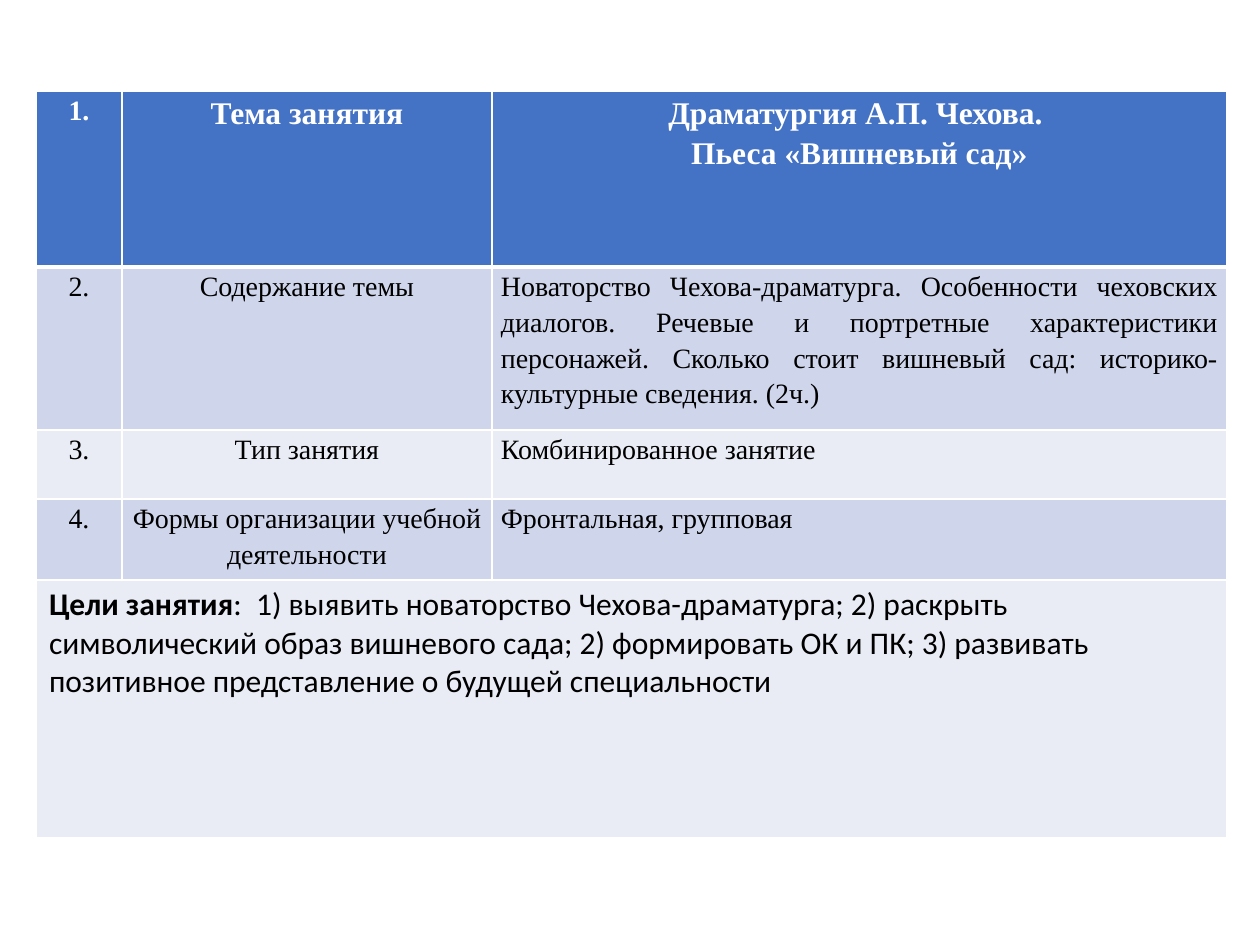
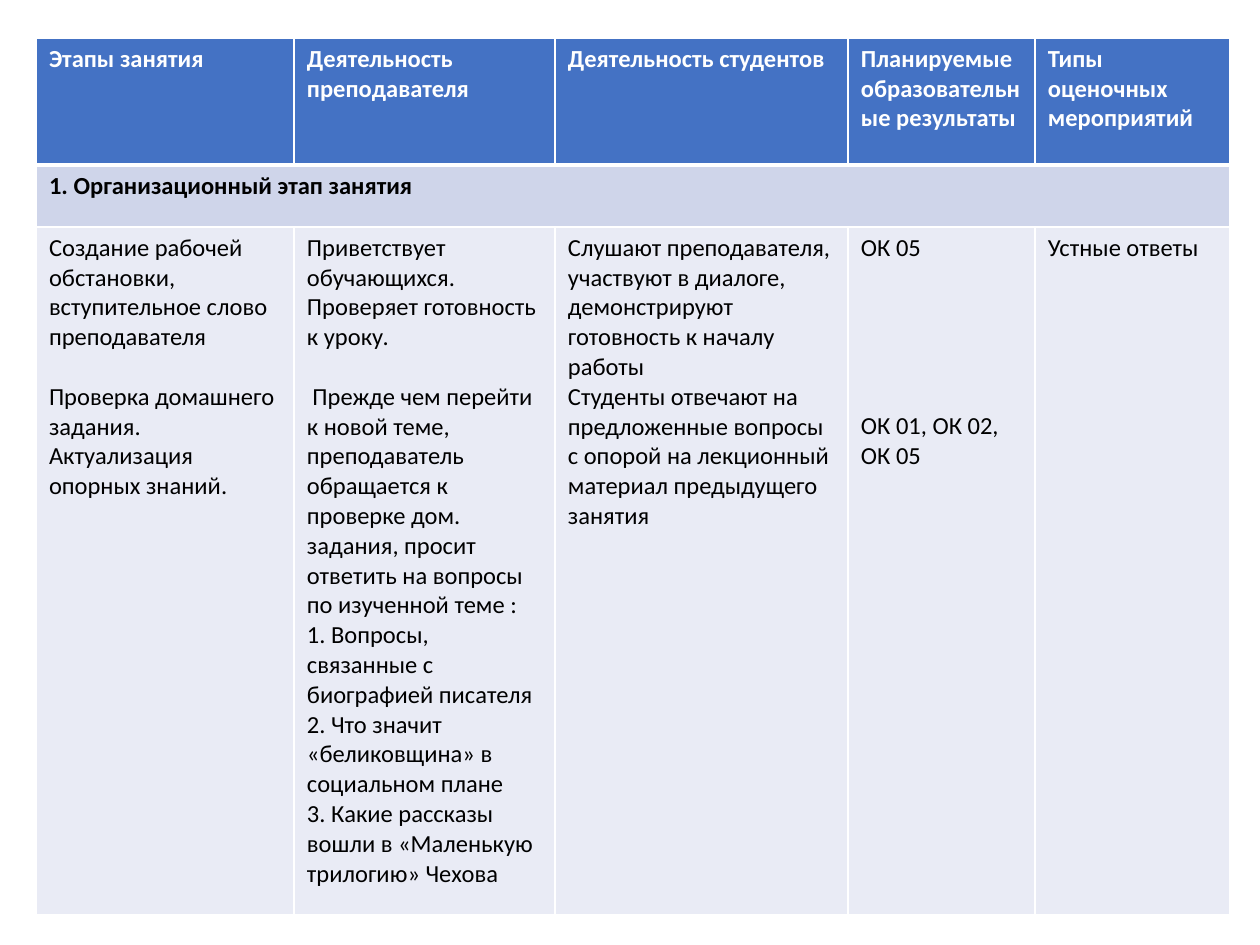
"""Build two lesson-plan slides, each holding one banded table."""
from dataclasses import dataclass, replace
from itertools import accumulate

from lxml.etree import SubElement as Sub
from pptx import Presentation
from pptx.dml.color import RGBColor
from pptx.enum.text import PP_ALIGN as Align
from pptx.oxml.ns import qn
from pptx.util import Emu, Pt

SCALE = 914400 / 126
WHITE, BLACK, BLUE = "FFFFFF", "000000", "4472C4"
BANDS = ("CFD5EA", "E9EBF5")
SERIF, SANS = "Times New Roman", "Calibri"
LINE = 17


@dataclass(frozen=True)
class Style:
    font: str
    size: int
    lead: float
    pad_x: int
    pad_y: int


@dataclass(frozen=True)
class Item:
    text: str
    align: Align = Align.LEFT
    style: Style | None = None
    bold: bool = False
    start: str = ""
    gap: int = 0
    span: int = 1


@dataclass(frozen=True)
class Grid:
    top: int
    cols: tuple[int, ...]
    rows: tuple[int, ...]
    style: Style
    items: tuple[tuple[Item, ...], ...]
    left: int = 36


def px(size: int) -> Emu:
    return Emu(round(size * SCALE))


def tint(code: str) -> RGBColor:
    return RGBColor.from_string(code)


def put(para, text: str, *, font: str, size: int, color: str, bold: bool = False) -> None:
    run = para.add_run()
    run.text = text
    run.font.name = font
    run.font.size = Pt(size)
    run.font.bold = bold
    run.font.color.rgb = tint(color)


def edge(cell, tag: str, width: int) -> None:
    line = Sub(cell._tc.get_or_add_tcPr(), qn(f"a:{tag}"), w=str(Pt(width)))
    Sub(Sub(line, qn("a:solidFill")), qn("a:srgbClr"), val=WHITE)


def frame(cell, row: int) -> None:
    widths = {"lnL": 1, "lnR": 1, "lnT": 3 if row == 1 else 1, "lnB": 1 if row else 3}
    for tag, width in widths.items():
        edge(cell, tag, width)
    cell.fill.solid()
    cell.fill.fore_color.rgb = tint(BANDS[(row - 1) % 2] if row else BLUE)


def fill(cell, item: Item, base: Style, head: bool) -> None:
    style = item.style or base
    cell.margin_left = cell.margin_right = px(style.pad_x)
    cell.margin_top = cell.margin_bottom = px(style.pad_y)
    look = dict(font=style.font, size=style.size, color=WHITE if head else BLACK)
    body = cell.text_frame
    for i, text in enumerate(item.text.split("\n")):
        para = body.add_paragraph() if i else body.paragraphs[0]
        para.alignment = item.align
        para.line_spacing = style.lead
        if i == 0:
            para.space_after = Pt(item.gap)
            if item.start:
                put(para, item.start, bold=True, **look)
        put(para, text, bold=head or item.bold, **look)


def draw(slide, grid: Grid) -> None:
    box = slide.shapes.add_table(
        len(grid.rows), len(grid.cols), px(grid.left), px(grid.top),
        px(sum(grid.cols)), px(sum(grid.rows)))
    table = box.table
    for col, width in zip(table.columns, grid.cols):
        col.width = px(width)
    for r, (height, items) in enumerate(zip(grid.rows, grid.items)):
        table.rows[r].height = px(height)
        for c in range(len(grid.cols)):
            frame(table.cell(r, c), r)
        spots = accumulate((item.span for item in items), initial=0)
        for c, item in zip(spots, items):
            cell = table.cell(r, c)
            if item.span > 1:
                cell.merge(table.cell(r, c + item.span - 1))
            fill(cell, item, grid.style, r == 0)


FORM = Style(SERIF, 16, 1.15, 9, 0)
TITLE = replace(FORM, size=18)
PLAN = Style(SANS, 14, 1.0, 13, 6)
GOALS = replace(PLAN, size=18)


def entry(num: int, name: str, text: str, align: Align = Align.LEFT,
          style: Style = FORM) -> tuple[Item, ...]:
    return (Item(f"{num}.", Align.CENTER), Item(name, Align.CENTER, style),
            Item(text, align, style))


TOPIC = Grid(91, (86, 370, 735), (176, 163, 69, 81, 258), FORM, (
    entry(1, "Тема занятия", "Драматургия А.П. Чехова. \nПьеса «Вишневый сад»",
          Align.CENTER, TITLE),
    entry(2, "Содержание темы",
          "Новаторство Чехова-драматурга. Особенности чеховских диалогов. "
          "Речевые и портретные характеристики персонажей. Сколько стоит "
          "вишневый сад: историко-культурные сведения. (2ч.)", Align.JUSTIFY),
    entry(3, "Тип занятия", "Комбинированное занятие"),
    entry(4, "Формы организации учебной деятельности", "Фронтальная, групповая"),
    (Item(":  1) выявить новаторство Чехова-драматурга; 2) раскрыть "
          "символический образ вишневого сада; 2) формировать ОК и ПК; "
          "3) развивать позитивное представление о будущей специальности",
          style=GOALS, start="Цели занятия", span=3),),
))

STAGES = Grid(38, (258, 261, 293, 187, 195), (127, 62, 688), PLAN, (
    tuple(map(Item, (
        "Этапы занятия", "Деятельность преподавателя", "Деятельность студентов",
        "Планируемые образовательные результаты", "Типы оценочных мероприятий"))),
    (Item("1. Организационный этап занятия", bold=True, span=5),),
    (
        Item("Создание рабочей обстановки, вступительное слово преподавателя\n"
             "Проверка домашнего задания. Актуализация опорных знаний.", gap=LINE),
        Item("Приветствует обучающихся. Проверяет готовность к уроку.\n"
             " Прежде чем перейти к новой теме, преподаватель обращается к "
             "проверке дом. задания, просит ответить на вопросы по изученной теме :\n"
             "1. Вопросы, связанные с биографией писателя\n"
             "2. Что значит «беликовщина» в социальном плане\n"
             "3. Какие рассказы вошли в «Маленькую трилогию» Чехова", gap=LINE),
        Item("Слушают преподавателя, участвуют в диалоге, демонстрируют "
             "готовность к началу работы\n"
             "Студенты отвечают на предложенные вопросы с опорой на "
             "лекционный материал предыдущего занятия"),
        Item("ОК 05\nОК 01, ОК 02, ОК 05", gap=5 * LINE),
        Item("Устные ответы"),
    ),
))


def main() -> None:
    deck = Presentation()
    deck.slide_width, deck.slide_height = px(1260), px(945)
    for grid in (TOPIC, STAGES):
        draw(deck.slides.add_slide(deck.slide_layouts[6]), grid)
    deck.save("out.pptx")


if __name__ == "__main__":
    main()
